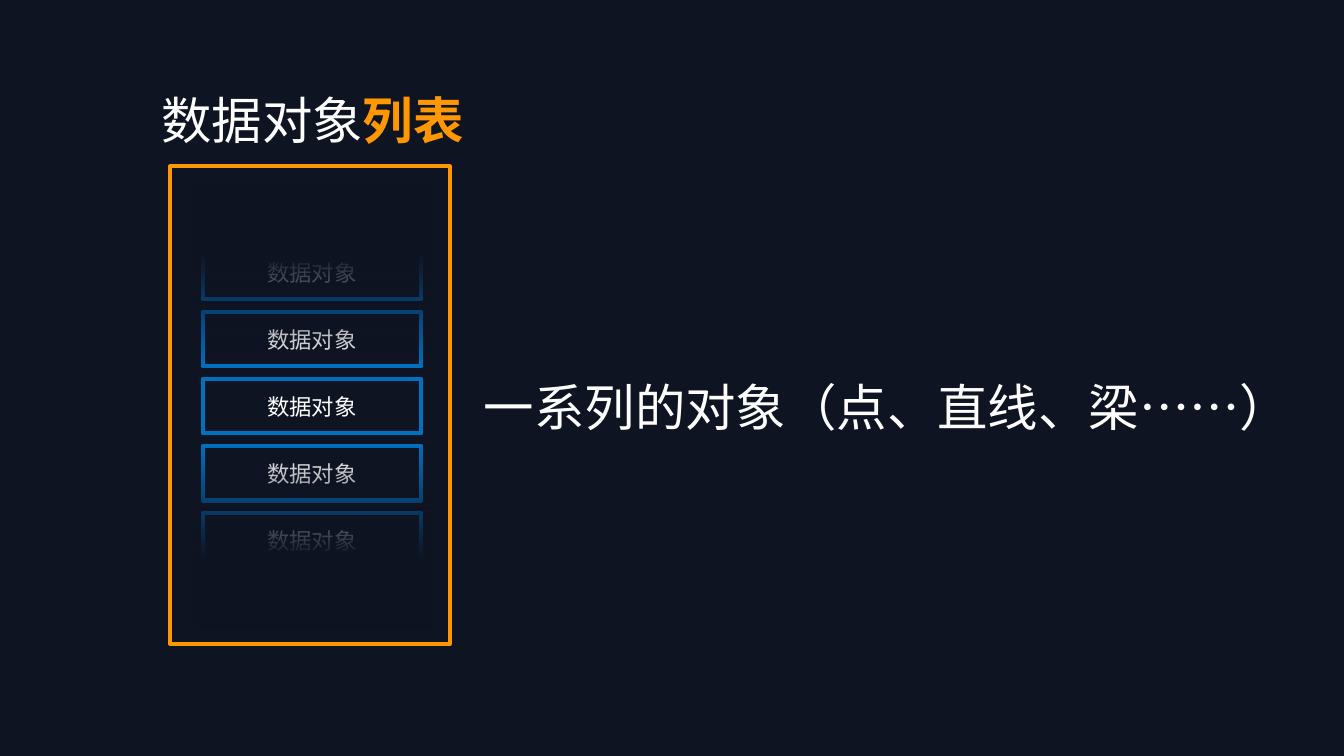
"""Build the slide that explains a list of data objects."""
import pptx
import pptx.dml.color
import pptx.enum.shapes
import pptx.enum.text
import pptx.oxml.ns
import pptx.util
from lxml import etree

COLORS = {"night": "0F1423", "blue": "0070C0", "orange": "FF9800", "white": "FFFFFF"}
SANS_SC, SANS_JP = "Noto Sans CJK SC", "Noto Sans CJK JP"
PX = 9144
PAGE_SIZE = (1333, 750)

ROW_LABELS = ["数据对象"] * 5
ROW_LEFT, ROW_WIDTH, ROW_HEIGHT = 201, 217, 54
FIRST_ROW_TOP, LAST_ROW_TOP = 243, 509
LIST_FRAME = (169, 165, 277, 474)
FADES = [((193, 182, 236, 181), 0), ((193, 442, 236, 182), 180)]
FADE_START = 0.38

TITLE_BOX = (150, 83, 320, 71)
TITLE = [("数据对象", "white", False), ("列表", "orange", True)]
CAPTION_BOX = (470, 368, 828, 71)
CAPTION = [("一系列的对象（点、直线、梁……）", "white", False)]


def emu(lengths):
    return [round(length * PX) for length in lengths]


def rgb(name):
    return pptx.dml.color.RGBColor.from_string(COLORS[name])


def write(para, spans, size, font_name):
    for words, color, bold in spans:
        span = para.add_run()
        span.text = words
        span.font.name = font_name
        span.font.size = pptx.util.Pt(size)
        span.font.bold = bold
        span.font.color.rgb = rgb(color)
        east_asian = etree.SubElement(span.font._element, pptx.oxml.ns.qn("a:ea"))
        east_asian.set("typeface", font_name)


def add_rectangle(page, place):
    shape = page.shapes.add_shape(pptx.enum.shapes.MSO_SHAPE.RECTANGLE, *emu(place))
    shape.shadow.inherit = False
    return shape


def add_outline(page, place, color):
    shape = add_rectangle(page, place)
    shape.fill.background()
    shape.line.color.rgb = rgb(color)
    shape.line.width = pptx.util.Pt(3)
    return shape


def add_row(page, top, label):
    row = add_outline(page, (ROW_LEFT, top, ROW_WIDTH, ROW_HEIGHT), "blue")
    row.text_frame.vertical_anchor = pptx.enum.text.MSO_ANCHOR.MIDDLE
    para = row.text_frame.paragraphs[0]
    para.alignment = pptx.enum.text.PP_ALIGN.CENTER
    write(para, [(label, "white", False)], 16, SANS_SC)


def add_fade(page, place, rotation):
    fade = add_rectangle(page, place)
    fade.rotation = rotation
    fade.line.fill.background()
    fade.fill.gradient()
    fade.fill.gradient_angle = 270
    for stop, position in zip(fade.fill.gradient_stops, (FADE_START, 1)):
        stop.position = position
        stop.color.rgb = rgb("night")
    clear_color = list(fade._element.spPr.iter(pptx.oxml.ns.qn("a:srgbClr")))[-1]
    etree.SubElement(clear_color, pptx.oxml.ns.qn("a:alpha")).set("val", "0")


def add_text(page, place, spans, font_name, wrap, alignment):
    box = page.shapes.add_textbox(*emu(place))
    box.text_frame.word_wrap = wrap
    box.text_frame.auto_size = pptx.enum.text.MSO_AUTO_SIZE.SHAPE_TO_FIT_TEXT
    para = box.text_frame.paragraphs[0]
    para.alignment = alignment
    write(para, spans, 36, font_name)


def main():
    deck = pptx.Presentation()
    deck.slide_width, deck.slide_height = emu(PAGE_SIZE)
    page = deck.slides.add_slide(deck.slide_layouts[6])
    page.background.fill.solid()
    page.background.fill.fore_color.rgb = rgb("night")

    pitch = (LAST_ROW_TOP - FIRST_ROW_TOP) / (len(ROW_LABELS) - 1)
    for index, label in enumerate(ROW_LABELS):
        add_row(page, FIRST_ROW_TOP + index * pitch, label)
    add_outline(page, LIST_FRAME, "orange")
    for place, rotation in FADES:
        add_fade(page, place, rotation)

    align = pptx.enum.text.PP_ALIGN
    add_text(page, TITLE_BOX, TITLE, SANS_SC, False, align.CENTER)
    add_text(page, CAPTION_BOX, CAPTION, SANS_JP, True, align.LEFT)
    deck.save("out.pptx")


if __name__ == "__main__":
    main()
